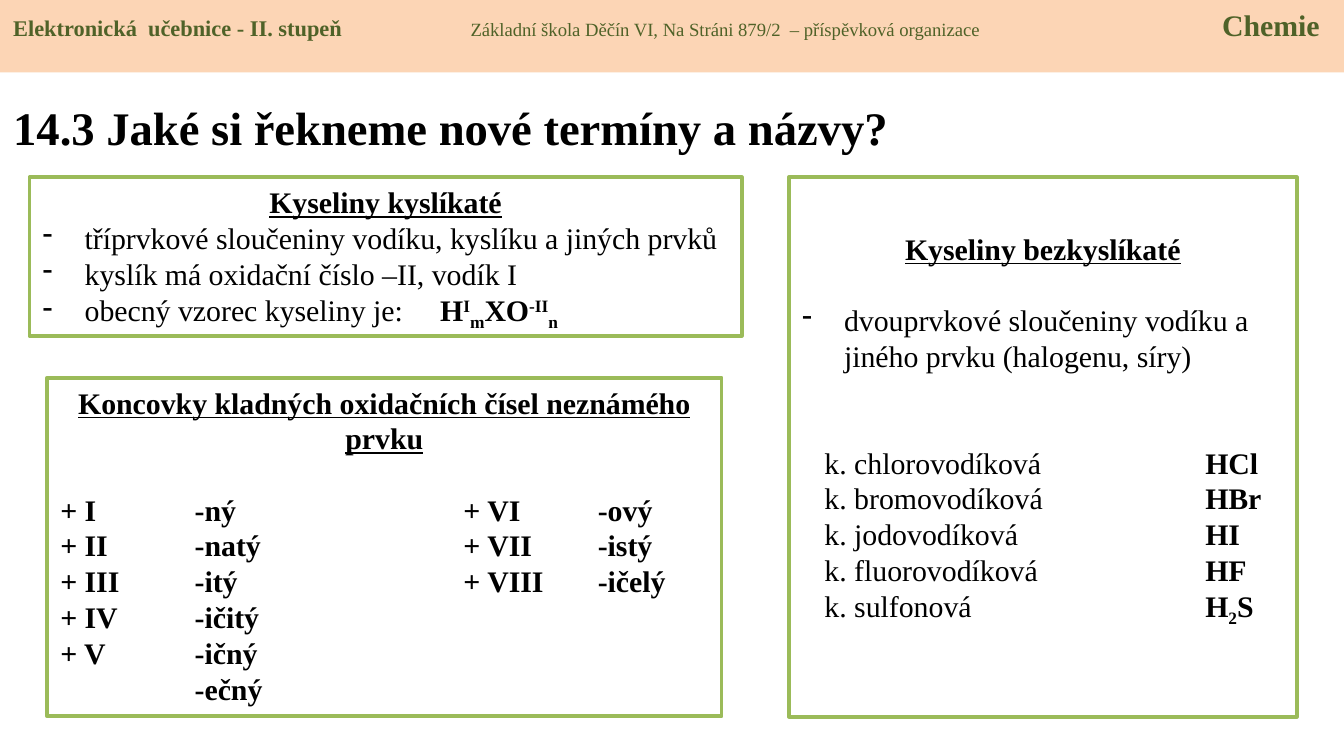
from dataclasses import dataclass

from lxml.etree import SubElement
from pptx import Presentation
from pptx.dml.color import RGBColor
from pptx.enum.shapes import MSO_SHAPE
from pptx.enum.text import MSO_ANCHOR, PP_ALIGN
from pptx.oxml.ns import qn
from pptx.util import Pt

COLORS = {
    "band": "FCD5B5",
    "header": "4F6228",
    "frame": "9BBB59",
    "panel": "FFFFFF",
    "text": "000000",
}
FONT = "Times New Roman"
BODY = 16
LINE = 19  # height of one body line
HANGING = 22.5
SUB, SUP = -25, 30


@dataclass(frozen=True)
class Run:
    text: str
    bold: bool = False
    underline: bool = False
    size: float = BODY
    color: str = "text"
    baseline: int = 0


@dataclass(frozen=True)
class Paragraph:
    runs: tuple[Run, ...]
    centered: bool = False
    bullet: bool = False
    before: float = 0
    tabs: tuple[tuple[float, str], ...] = ()


@dataclass(frozen=True)
class Box:
    left: float
    top: float
    width: float
    height: float
    paragraphs: tuple[Paragraph, ...]
    fill: str = "panel"
    line: str | None = "frame"
    middle: bool = False
    bottom_inset: float = 3.6


def rgb(name: str) -> RGBColor:
    return RGBColor.from_string(COLORS[name])


def add_text(paragraph, text: str, *, bold: bool, underline: bool, size: float,
             color: str, baseline: int) -> None:
    run = paragraph.add_run()
    run.text = text
    run.font.name = FONT
    run.font.size = Pt(size)
    run.font.bold = bold
    run.font.underline = underline
    run.font.color.rgb = rgb(color)
    if baseline:
        run.font._element.set("baseline", str(baseline * 1000))


def fill_paragraph(paragraph, content: Paragraph) -> None:
    paragraph.alignment = PP_ALIGN.CENTER if content.centered else PP_ALIGN.LEFT
    paragraph.space_before = Pt(content.before)
    properties = paragraph._p.get_or_add_pPr()
    if content.bullet:
        properties.set("marL", str(Pt(HANGING)))
        properties.set("indent", str(-Pt(HANGING)))
        SubElement(properties, qn("a:buChar"), char="-")
    if content.tabs:
        stops = SubElement(properties, qn("a:tabLst"))
        for position, side in content.tabs:
            SubElement(stops, qn("a:tab"), pos=str(Pt(position)), algn=side)
    for run in content.runs:
        add_text(paragraph, run.text, bold=run.bold, underline=run.underline,
                 size=run.size, color=run.color, baseline=run.baseline)


def draw_box(slide, box: Box) -> None:
    shape = slide.shapes.add_shape(MSO_SHAPE.RECTANGLE, Pt(box.left), Pt(box.top),
                                   Pt(box.width), Pt(box.height))
    shape.shadow.inherit = False
    shape.fill.solid()
    shape.fill.fore_color.rgb = rgb(box.fill)
    if box.line:
        shape.line.color.rgb = rgb(box.line)
        shape.line.width = Pt(2)
    else:
        shape.line.fill.background()
    frame = shape.text_frame
    frame.word_wrap = True
    frame.vertical_anchor = MSO_ANCHOR.MIDDLE if box.middle else MSO_ANCHOR.TOP
    frame.margin_bottom = Pt(box.bottom_inset)
    for index, content in enumerate(box.paragraphs):
        paragraph = frame.add_paragraph() if index else frame.paragraphs[0]
        fill_paragraph(paragraph, content)


def heading(text: str) -> Paragraph:
    return Paragraph((Run(text, bold=True, underline=True),), centered=True)


def bullet(text: str, before: float = 0) -> Paragraph:
    return Paragraph((Run(text),), bullet=True, before=before)


# Slide title and header band
title = Box(0, 44.6, 587.5, 46.8, (
    Paragraph((Run("14.3 Jaké si řekneme nové termíny a názvy?", bold=True, size=25),)),
), line=None, middle=True)

header = Box(0, 0, 720, 38.9, (
    Paragraph((
        Run("Elektronická  učebnice - II. stupeň\t", bold=True, size=12, color="header"),
        Run("Základní škola Děčín VI, Na Stráni 879/2  – příspěvková organizace\t",
            size=10, color="header"),
        Run("Chemie", bold=True, color="header"),
    ), tabs=((245, "l"), (700, "r"))),
), fill="band", line=None)

# Oxygen acids with their general formula
FORMULA = (("H", 0), ("I", SUP), ("m", SUB), ("XO", 0), ("-II", SUP), ("n", SUB))
oxygen_acids = Box(15.8, 95, 381.6, 85, (
    heading("Kyseliny kyslíkaté"),
    bullet("tříprvkové sloučeniny vodíku, kyslíku a jiných prvků"),
    bullet("kyslík má oxidační číslo –II, vodík I"),
    Paragraph((
        Run("obecný vzorec kyseliny je:\t"),
        *(Run(text, bold=True, baseline=baseline) for text, baseline in FORMULA),
    ), bullet=True, tabs=((213, "l"),)),
))

# Endings for positive oxidation numbers
ENDINGS = (
    "+ I\t-ný\t+ VI\t-ový",
    "+ II\t-natý\t+ VII\t-istý",
    "+ III\t-itý\t+ VIII\t-ičelý",
    "+ IV\t-ičitý",
    "+ V\t-ičný",
    "\t-ečný",
)
endings = Box(25.2, 202.3, 361.4, 181.5, (
    heading("Koncovky kladných oxidačních čísel neznámého prvku"),
    *(Paragraph((Run(row, bold=True),), before=0 if index else LINE,
                tabs=((72, "l"), (216, "l"), (288, "l")))
      for index, row in enumerate(ENDINGS)),
))

# Oxygen-free acids with their formulas
ACIDS = (
    ("chlorovodíková", (("HCl", 0),)),
    ("bromovodíková", (("HBr", 0),)),
    ("jodovodíková", (("HI", 0),)),
    ("fluorovodíková", (("HF", 0),)),
    ("sulfonová", (("H", 0), ("2", SUB), ("S", 0))),
)
oxygen_free_acids = Box(422.6, 95, 272.2, 289, (
    heading("Kyseliny bezkyslíkaté"),
    bullet("dvouprvkové sloučeniny vodíku a jiného prvku (halogenu, síry)", before=LINE),
    *(Paragraph((
        Run(f"\tk. {name}\t"),
        *(Run(text, bold=True, baseline=baseline) for text, baseline in formula),
    ), before=0 if index else 2 * LINE, tabs=((12, "l"), (216, "l")))
      for index, (name, formula) in enumerate(ACIDS)),
), middle=True, bottom_inset=3.6 + LINE)


def main() -> None:
    presentation = Presentation()
    presentation.slide_width = Pt(720)
    presentation.slide_height = Pt(405)
    slide = presentation.slides.add_slide(presentation.slide_layouts[6])
    for box in (title, header, oxygen_acids, endings, oxygen_free_acids):
        draw_box(slide, box)
    presentation.save("out.pptx")


if __name__ == "__main__":
    main()
